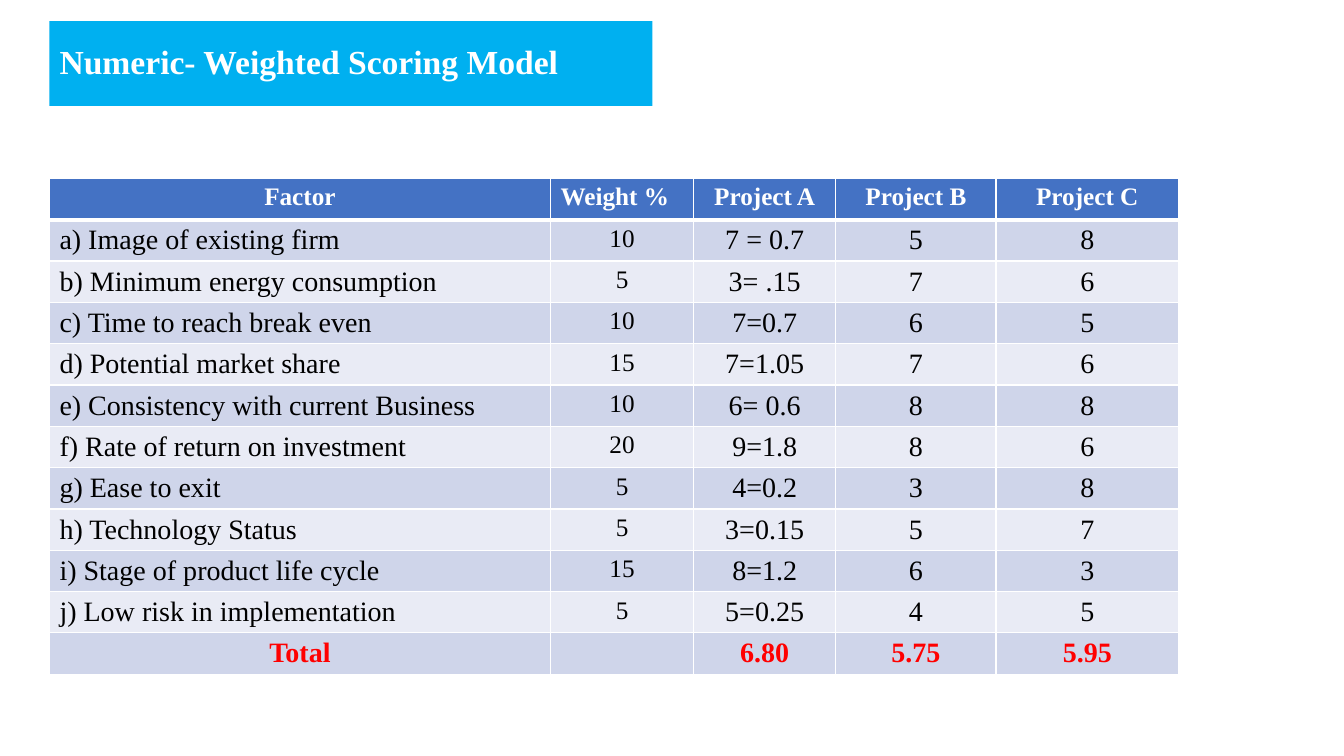
from lxml import etree
from pptx import Presentation
from pptx.dml.color import RGBColor
from pptx.enum.text import MSO_ANCHOR, MSO_AUTO_SIZE, PP_ALIGN
from pptx.oxml.ns import qn
from pptx.util import Inches, Pt

LEFT, CENTER = PP_ALIGN.LEFT, PP_ALIGN.CENTER
MIDDLE, NO_FIT = MSO_ANCHOR.MIDDLE, MSO_AUTO_SIZE.NONE

# Content
TITLE = "Numeric- Weighted Scoring Model"
HEADER = ("Factor", "Weight %", "Project A", "Project B", "Project C")
SCORES = [
    ("a) Image of existing firm", "10", "7 = 0.7", "5", "8"),
    ("b) Minimum energy consumption", "5", "3= .15", "7", "6"),
    ("c) Time to reach break even", "10", "7=0.7", "6", "5"),
    ("d) Potential market share", "15", "7=1.05", "7", "6"),
    ("e) Consistency with current Business", "10", "6= 0.6", "8", "8"),
    ("f) Rate of return on investment", "20", "9=1.8", "8", "6"),
    ("g) Ease to exit", "5", "4=0.2", "3", "8"),
    ("h) Technology Status", "5", "3=0.15", "5", "7"),
    ("i) Stage of product life cycle", "15", "8=1.2", "6", "3"),
    ("j) Low risk in implementation", "5", "5=0.25", "4", "5"),
]
TOTAL = ("Total", "", "6.80", "5.75", "5.95")
ROWS = [HEADER, *SCORES, TOTAL]

# Style and layout, in inches
FONT = "Times New Roman"
WHITE = RGBColor(0xFF, 0xFF, 0xFF)
BLACK = RGBColor(0, 0, 0)
RED = RGBColor(0xFF, 0, 0)
SKY = RGBColor(0x00, 0xB0, 0xF0)
BLUE = RGBColor(0x44, 0x72, 0xC4)
BANDS = (RGBColor(0xE9, 0xEB, 0xF5), RGBColor(0xCF, 0xD5, 0xEA))
MARGIN = 0.49
TABLE_TOP = 1.77
COL_WIDTHS = (4.97, 1.42, 1.41, 1.59, 1.81)
ROW_HEIGHT = 0.41
FACTOR, WEIGHT = 0, 1
LAST = len(ROWS) - 1


def add_run(p, text, size, color, bold):
    r = p.add_run()
    r.text = text
    r.font.name = FONT
    r.font.size = Pt(size)
    r.font.bold = bold
    r.font.color.rgb = color


def set_borders(cell, top, bottom):
    tc_pr = cell._tc.get_or_add_tcPr()
    widths = (("a:lnL", 1), ("a:lnR", 1), ("a:lnT", top), ("a:lnB", bottom))
    for i, (tag, width) in enumerate(widths):
        ln = etree.Element(qn(tag), w=str(Pt(width)))
        fill = etree.SubElement(ln, qn("a:solidFill"))
        etree.SubElement(fill, qn("a:srgbClr"), val=str(WHITE))
        tc_pr.insert(i, ln)


def fill_cell(cell, row, col, text):
    header, total = row == 0, row == LAST
    cell.fill.solid()
    cell.fill.fore_color.rgb = BLUE if header else BANDS[row % 2]
    set_borders(cell, 3 if row == 1 else 1, 3 if header else 1)
    if total:
        cell.fill.fore_color.rgb = BANDS[1]
    if not text:
        return
    p = cell.text_frame.paragraphs[0]
    left = col == WEIGHT if header else col == FACTOR and not total
    p.alignment = LEFT if left else CENTER
    size = 18 if header or col == WEIGHT else 20
    color = WHITE if header else RED if total else BLACK
    add_run(p, text, size, color, header or total)


prs = Presentation()
prs.slide_width, prs.slide_height = Inches(13.33), Inches(7.5)
slide = prs.slides.add_slide(prs.slide_layouts[5])

# Scoring table
frame = slide.shapes.add_table(
    len(ROWS), len(HEADER), Inches(MARGIN), Inches(TABLE_TOP),
    Inches(sum(COL_WIDTHS)), Inches(ROW_HEIGHT * len(ROWS)))
table = frame.table
for column, width in zip(table.columns, COL_WIDTHS):
    column.width = Inches(width)
for row, texts in enumerate(ROWS):
    table.rows[row].height = Inches(ROW_HEIGHT)
    for col, text in enumerate(texts):
        fill_cell(table.cell(row, col), row, col, text)

# Title banner
title = slide.shapes.title
title.left, title.top = Inches(MARGIN), Inches(0.21)
title.width, title.height = Inches(5.98), Inches(0.84)
title.fill.solid()
title.fill.fore_color.rgb = SKY
tf = title.text_frame
tf.word_wrap = True
tf.auto_size = NO_FIT
tf.vertical_anchor = MIDDLE
p = tf.paragraphs[0]
p.alignment = LEFT
p.line_spacing = 0.9
add_run(p, TITLE, 24, WHITE, True)

prs.save("out.pptx")
